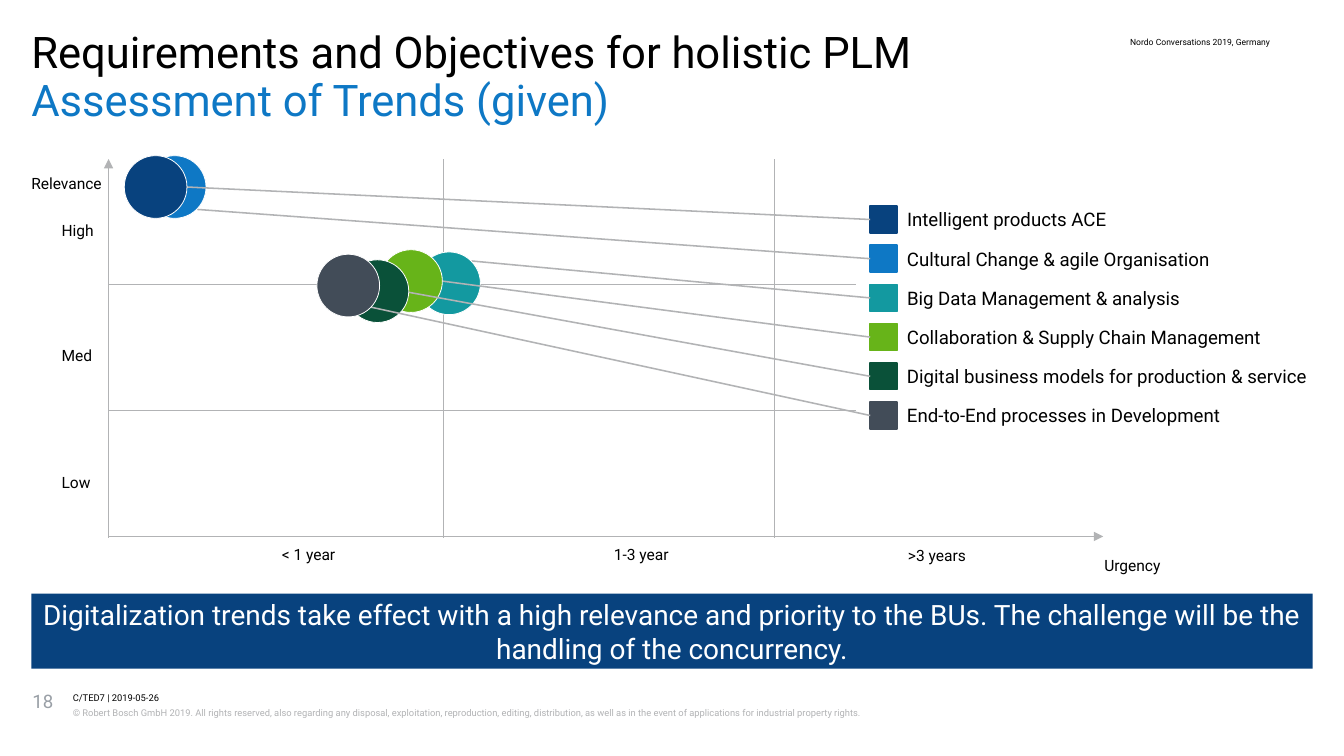
"""Builds a trend assessment slide: relevance over urgency, with a legend."""
from lxml import etree
from pptx import Presentation
from pptx.dml.color import RGBColor
from pptx.enum.shapes import MSO_CONNECTOR, MSO_SHAPE
from pptx.enum.text import MSO_ANCHOR, MSO_AUTO_SIZE, PP_ALIGN
from pptx.oxml.ns import qn
from pptx.util import Inches, Pt

RECT, OVAL = MSO_SHAPE.RECTANGLE, MSO_SHAPE.OVAL
STRAIGHT = MSO_CONNECTOR.STRAIGHT
LEFT, CENTER = PP_ALIGN.LEFT, PP_ALIGN.CENTER
TOP, MIDDLE = MSO_ANCHOR.TOP, MSO_ANCHOR.MIDDLE
NO_FIT = MSO_AUTO_SIZE.NONE
FONT = "Roboto"
BLACK, WHITE, GREY = "000000", "FFFFFF", "B2B3B5"
NAVY, BLUE = "08427E", "0E78C5"

rgb = RGBColor.from_string


def write(s, text, size, color=BLACK, align=LEFT, anchor=TOP, margins=(0, 0), spacing=None):
    tf = s.text_frame
    tf.text = text
    tf.word_wrap = True
    tf.auto_size = NO_FIT
    tf.vertical_anchor = anchor
    tf.margin_left = tf.margin_right = Inches(margins[0])
    tf.margin_top = tf.margin_bottom = Inches(margins[1])
    p = tf.paragraphs[0]
    p.alignment = align
    p.space_before = Pt(0)
    if spacing:
        p.line_spacing = spacing
    r = p.runs[0]
    r.font.name = FONT
    r.font.size = Pt(size)
    r.font.color.rgb = rgb(color)


def draw(kind, x, y, w, h, fill, outline=None, weight=1):
    s = shapes.add_shape(kind, Inches(x), Inches(y), Inches(w), Inches(h))
    s.shadow.inherit = False
    s.fill.solid()
    s.fill.fore_color.rgb = rgb(fill)
    if outline:
        s.line.color.rgb = rgb(outline)
        s.line.width = Pt(weight)
    else:
        s.line.fill.background()
    return s


prs = Presentation()
prs.slide_width = Inches(12)
prs.slide_height = Inches(6.75)
slide = prs.slides.add_slide(prs.slide_layouts[1])
shapes = slide.shapes

title, body = slide.placeholders
headings = [
    (title, 0.71, "Assessment of Trends (given)", BLUE),
    (body, 0.28, "Requirements and Objectives for holistic PLM", BLACK),
]
for s, y, text, color in headings:
    s.left, s.top, s.width, s.height = Inches(0.28), Inches(y), Inches(11.43), Inches(0.43)
    write(s, text, 28, color, spacing=0.89)
pPr = body.text_frame.paragraphs[0]._p.get_or_add_pPr()
pPr.set("marL", "0")
pPr.set("indent", "0")
etree.SubElement(pPr, qn("a:buNone"))

grid = [
    (0.97, 3.66, 9.85, 3.66, 0.5),
    (0.97, 2.54, 9.85, 2.54, 0.5),
    (3.96, 4.8, 3.96, 1.42, 0.5),
    (6.91, 4.8, 6.91, 1.42, 0.5),
    (0.97, 4.79, 9.85, 4.79, 0.75),
    (0.97, 4.8, 0.97, 1.42, 0.75),
]
lines = []
for x1, y1, x2, y2, weight in grid:
    line = shapes.add_connector(STRAIGHT, Inches(x1), Inches(y1), Inches(x2), Inches(y2))
    line.line.width = Pt(weight)
    lines.append(line)
for axis in lines[-2:]:
    etree.SubElement(axis.line._get_or_add_ln(), qn("a:tailEnd"), type="triangle")

draw(RECT, 7.65, 1.67, 3.78, 2.34, WHITE, WHITE, 0.75)

legend = [
    ("Intelligent products ACE", NAVY, 2.39),
    ("Cultural Change & agile Organisation", BLUE, 3.04),
    ("Big Data Management & analysis", "1399A0", 3.71),
    ("Collaboration & Supply Chain Management", "67B419", 3.4),
    ("Digital business models for production & service", "0A5139", 3.86),
    ("End-to-End processes in Development", "424C58", 3.36),
]
keys = []
for i, (text, color, width) in enumerate(legend):
    y = 1.84 + 0.35 * i
    label = draw(RECT, 8, y - 0.03, width, 0.3, WHITE)
    write(label, text, 12, anchor=MIDDLE, margins=(0.1, 0.05))
    keys.append(draw(RECT, 7.77, y, 0.24, 0.24, color, color))

bubbles = [
    (2, 3.73, 2.25, 4.21, 2.33),
    (1, 1.28, 1.39, 1.76, 1.87),
    (3, 3.39, 2.23, 3.95, 2.51),
    (4, 3.09, 2.32, 3.65, 2.61),
    (5, 2.83, 2.27, 3.3, 2.74),
    (0, 1.11, 1.39, 1.67, 1.67),
]
for i, x, y, x1, y1 in bubbles:
    leader = shapes.add_connector(STRAIGHT, Inches(x1), Inches(y1), Inches(7.77), Inches(y1))
    leader.end_connect(keys[i], 1)
    leader.line.width = Pt(1)
    lines.append(leader)
    draw(OVAL, x, y, 0.56, 0.56, legend[i][1], WHITE, 0.5)

for line in lines:
    line.line.color.rgb = rgb(GREY)
    etree.SubElement(line._element.spPr, qn("a:effectLst"))

texts = [
    ("Relevance", 0.28, 1.4, 1, 0.39, 10, BLACK, LEFT, TOP, 0, Pt(23)),
    ("High", 0.55, 1.42, 0.39, 1.12, 10, BLACK, LEFT, MIDDLE, 0, Pt(23)),
    ("Med", 0.55, 2.54, 0.39, 1.12, 10, BLACK, LEFT, MIDDLE, 0, Pt(23)),
    ("Low", 0.55, 3.67, 0.39, 1.12, 10, BLACK, LEFT, MIDDLE, 0, Pt(23)),
    ("Urgency", 9.61, 4.81, 1, 0.36, 10, BLACK, CENTER, TOP, 0, Pt(23)),
    ("< 1 year", 1.26, 4.83, 2.99, 0.34, 10, BLACK, CENTER, TOP, 0.04, None),
    ("1-3 year", 4.25, 4.83, 2.95, 0.34, 10, BLACK, CENTER, TOP, 0.04, None),
    (">3 years", 6.91, 4.83, 2.91, 0.31, 10, BLACK, CENTER, TOP, 0.04, None),
    ("Nordo Conversations 2019, Germany", 10.09, 0.28, 1.85, 0.85, 5.5, BLACK, LEFT, TOP, 0.02, Pt(9)),
    ("18", 0.29, 6.16, 0.32, 0.45, 12, "999FA6", LEFT, TOP, 0, None),
    ("C/TED7 | 2019-05-26", 0.65, 6.17, 10.01, 0.12, 6, BLACK, LEFT, TOP, 0, 1.07),
    ("© Robert Bosch GmbH 2019. All rights reserved, also regarding any disposal, "
     "exploitation, reproduction, editing, distribution, as well as in the event of "
     "applications for industrial property rights.",
     0.65, 6.29, 10.01, 0.24, 6, GREY, LEFT, TOP, 0, 1.2),
]
for text, x, y, w, h, size, color, align, anchor, margin, spacing in texts:
    s = shapes.add_textbox(Inches(x), Inches(y), Inches(w), Inches(h))
    write(s, text, size, color, align, anchor, (0, margin), spacing)

banner = draw(RECT, 0.28, 5.3, 11.44, 0.67, NAVY)
write(banner, "Digitalization trends take effect with a high relevance and priority to the BUs. "
      "The challenge will be the handling of the concurrency.",
      18, WHITE, CENTER, MIDDLE, (0.08, 0.08))

prs.save("out.pptx")
